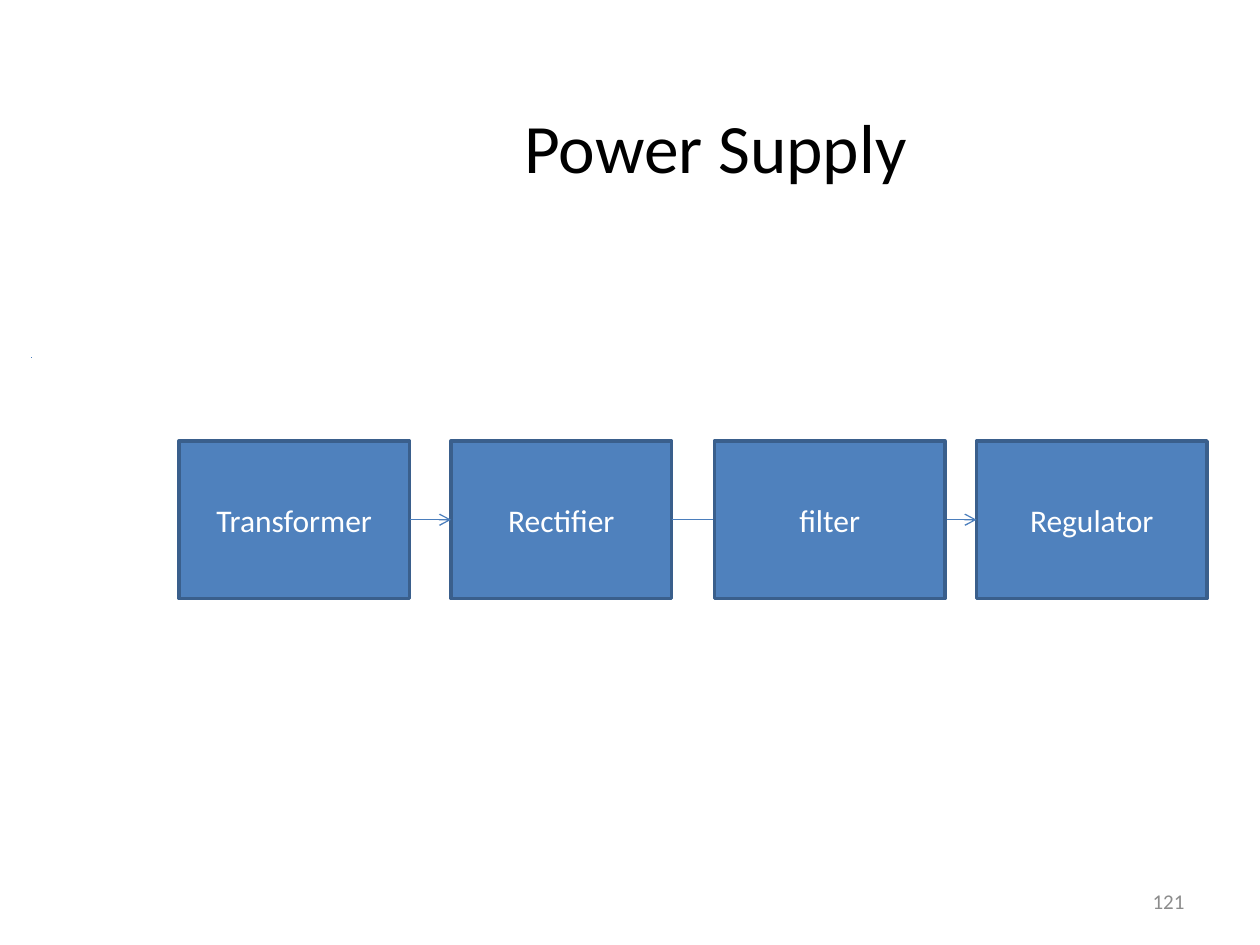
from lxml import etree
from pptx import Presentation
from pptx.dml.color import RGBColor
from pptx.enum.shapes import MSO_CONNECTOR as CONN, MSO_SHAPE as SHAPE
from pptx.enum.text import MSO_ANCHOR as ANCHOR, MSO_AUTO_SIZE as FIT, PP_ALIGN as ALIGN
from pptx.oxml.ns import qn
from pptx.util import Inches, Pt

BLACK = RGBColor(0x00, 0x00, 0x00)
WHITE = RGBColor(0xFF, 0xFF, 0xFF)
GREY = RGBColor(0x8C, 0x8C, 0x8C)
BLUE = RGBColor(0x4F, 0x81, 0xBD)
DARK_BLUE = RGBColor(0x3A, 0x5F, 0x8C)
LINE_BLUE = RGBColor(0x4B, 0x7E, 0xBC)
FONT = "Calibri"
BLOCK_TOP, BLOCK_HEIGHT = 3.5, 1.25
TOP, LEFT, BOTTOM, RIGHT = range(4)


def write(sp, text, size, color, align=ALIGN.CENTER, anchor=ANCHOR.MIDDLE):
    tf = sp.text_frame
    tf.word_wrap = True
    tf.auto_size = FIT.NONE
    tf.vertical_anchor = anchor
    p = tf.paragraphs[0]
    p.alignment = align
    r = p.add_run()
    r.text = text
    r.font.name = FONT
    r.font.size = Pt(size)
    r.font.color.rgb = color


def add_title(s, text):
    sp = s.shapes.title
    sp.left, sp.top = Inches(1.58), Inches(0.83)
    sp.width, sp.height = Inches(8.2), Inches(1.25)
    write(sp, text, 39.6, BLACK, anchor=ANCHOR.TOP)
    sp.text_frame.margin_top = 0


def add_block(s, text, left, width=1.83):
    sp = s.shapes.add_shape(SHAPE.RECTANGLE, Inches(left), Inches(BLOCK_TOP),
                            Inches(width), Inches(BLOCK_HEIGHT))
    sp.shadow.inherit = False
    sp.fill.solid()
    sp.fill.fore_color.rgb = BLUE
    sp.line.color.rgb = DARK_BLUE
    sp.line.width = Pt(2)
    write(sp, text, 18, WHITE)
    return sp


def add_line(s, x1, y1, x2, y2):
    line = s.shapes.add_connector(CONN.STRAIGHT, Inches(x1), Inches(y1), Inches(x2), Inches(y2))
    line.line.color.rgb = LINE_BLUE
    line.line.width = Pt(0.75)
    etree.SubElement(line._element.spPr, qn("a:effectLst"))
    return line


def add_arrow(s, source, target):
    arrow = add_line(s, 0, 0, 0, 0)
    arrow.begin_connect(source, RIGHT)
    arrow.end_connect(target, LEFT)
    etree.SubElement(arrow.line._get_or_add_ln(), qn("a:tailEnd"), type="arrow")


def add_page_number(s, text):
    sp = s.shapes.add_textbox(Inches(7.17), Inches(6.95), Inches(2.33), Inches(0.4))
    write(sp, text, 12, GREY, align=ALIGN.RIGHT)


def main():
    prs = Presentation()
    prs.slide_width, prs.slide_height = Inches(10), Inches(7.5)
    s = prs.slides.add_slide(prs.slide_layouts[5])

    add_page_number(s, "121")
    add_title(s, "Power Supply")

    # Stages of the supply
    transformer = add_block(s, "Transformer", 1.42)
    rectifier = add_block(s, "Rectifier", 3.58, 1.75)
    regulator = add_block(s, "Regulator", 7.75)

    # Short stray line at the left edge
    add_line(s, 0.25, 2.84, 0.25, 2.83)

    # Signal path; the second arrow runs behind the filter
    add_arrow(s, transformer, rectifier)
    add_arrow(s, rectifier, regulator)
    add_block(s, "filter", 5.67)

    prs.save("out.pptx")


if __name__ == "__main__":
    main()
